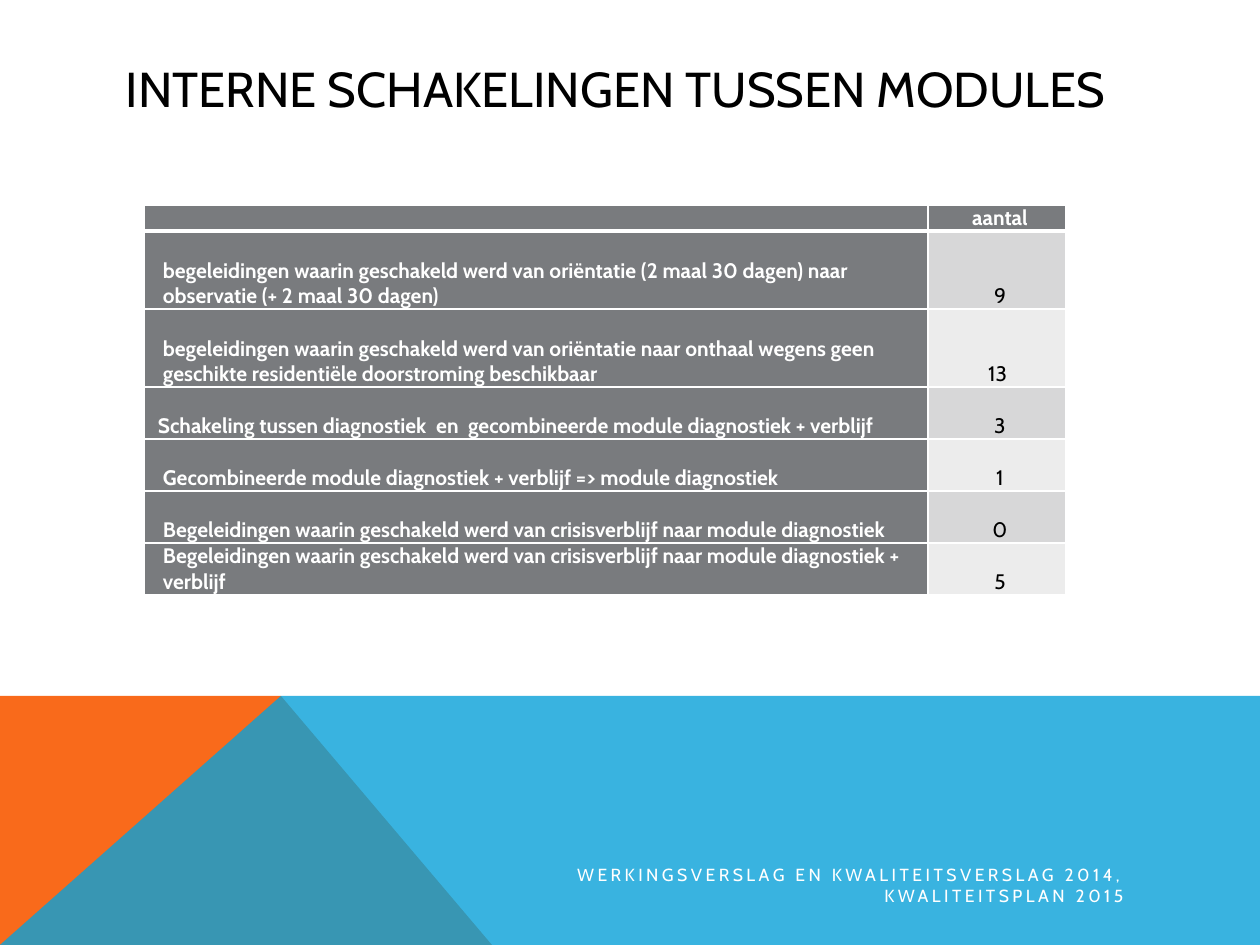
from dataclasses import dataclass

from lxml.etree import SubElement
from pptx import Presentation
from pptx.dml.color import RGBColor as Rgb
from pptx.enum.text import MSO_ANCHOR as Anchor, MSO_AUTO_SIZE as AutoSize, PP_ALIGN as Align
from pptx.oxml.ns import qn
from pptx.util import Emu, Pt

SCALE = 914400 / 126


@dataclass(frozen=True)
class Theme:
    """Colours, font and type sizes of the deck."""
    font: str = "Cabin"
    black: str = "000000"
    white: str = "FFFFFF"
    grey: str = "797B7E"
    bands: tuple = ("D7D7D8", "ECECEC")
    orange: str = "F96A1B"
    blue: str = "08A1D9"
    title: int = 28
    body: int = 12
    footer: int = 10


THEME = Theme()
COLUMNS = (784, 138)
ROWS = (
    (26, 0, "", "aantal"),
    (78, 13, "begeleidingen waarin geschakeld werd van oriëntatie (2 maal 30 dagen) naar "
             "observatie (+ 2 maal 30 dagen)", "9"),
    (78, 13, "begeleidingen waarin geschakeld werd van oriëntatie naar onthaal wegens geen "
             "geschikte residentiële doorstroming beschikbaar", "13 "),
    (52, 8, "Schakeling tussen diagnostiek\u00a0 en\u00a0 gecombineerde module diagnostiek + verblijf", "3"),
    (52, 13, "Gecombineerde module diagnostiek + verblijf => module diagnostiek\u00a0", "1"),
    (52, 13, "Begeleidingen waarin geschakeld werd van crisisverblijf naar module diagnostiek", "0"),
    (51, 13, "Begeleidingen waarin geschakeld werd van crisisverblijf naar module diagnostiek "
             "+ verblijf", "5"),
)


def px(length):
    """Turn pixels into EMU."""
    return Emu(round(length * SCALE))


def style(para, size, color, align=Align.LEFT, bold=False):
    """Format a whole paragraph."""
    para.alignment = align
    font = para.font
    font.name, font.size, font.bold = THEME.font, Pt(size), bold
    font.color.rgb = Rgb.from_string(color)


def add_polygon(page, box, points, color):
    """Draw a filled outline with points relative to the box."""
    left, top = box[:2]
    corners = [(left + x, top + y) for x, y in points]
    builder = page.shapes.build_freeform(*corners[0], scale=SCALE)
    builder.add_line_segments(corners[1:], close=True)
    shape = builder.convert_to_shape()
    shape.shadow.inherit = False
    shape.fill.solid()
    shape.fill.fore_color.rgb = Rgb.from_string(color)
    shape.line.fill.background()
    return shape


def add_backdrop(page, box):
    """Draw the orange wedge and the translucent blue field."""
    width, height = box[2:]
    peak = 281
    add_polygon(page, box, [(0, height), (0, 0), (peak, 0), (492, height)], THEME.orange)
    field = add_polygon(page, box, [(0, height), (peak, 0), (width, 0), (width, height)], THEME.blue)
    color = field.fill._xPr.find(".//" + qn("a:srgbClr"))
    SubElement(color, qn("a:alpha"), val="80000")


def add_title(page, box, text):
    """Place the title in its placeholder."""
    title = page.shapes.title
    title.left, title.top, title.width, title.height = map(px, box)
    frame = title.text_frame
    frame.text = text
    frame.word_wrap, frame.auto_size = True, AutoSize.NONE
    frame.vertical_anchor = Anchor.MIDDLE
    style(frame.paragraphs[0], THEME.title, THEME.black)


def set_borders(cell, top, bottom):
    """Give a cell white borders with the given top and bottom widths."""
    properties = cell._tc.get_or_add_tcPr()
    widths = {"a:lnL": 1, "a:lnR": 1, "a:lnT": top, "a:lnB": bottom}
    for index, (tag, width) in enumerate(widths.items()):
        line = SubElement(properties, qn(tag), w=str(Pt(width)))
        fill = SubElement(line, qn("a:solidFill"))
        SubElement(fill, qn("a:srgbClr"), val=THEME.white)
        properties.insert(index, line)


def fill_cell(cell, text, indent, fill, color, align, bold):
    """Write and colour one table cell."""
    cell.margin_left = cell.margin_right = px(6)
    cell.margin_top = cell.margin_bottom = 0
    cell.vertical_anchor = Anchor.BOTTOM
    cell.fill.solid()
    cell.fill.fore_color.rgb = Rgb.from_string(fill)
    para = cell.text_frame.paragraphs[0]
    style(para, THEME.body, color, align, bold)
    para._p.get_or_add_pPr().set("marL", str(px(indent)))
    if text:
        para.add_run().text = text
    else:
        SubElement(para._p, qn("a:endParaRPr"), sz=str(THEME.body * 100))


def add_counts(page, box):
    """Build the table of transitions and their counts."""
    table = page.shapes.add_table(len(ROWS), len(COLUMNS), *map(px, box)).table
    for column, width in zip(table.columns, COLUMNS):
        column.width = px(width)
    for index, (height, indent, label, count) in enumerate(ROWS):
        table.rows[index].height = px(height)
        header = index == 0
        label_cell, count_cell = table.rows[index].cells
        fill_cell(label_cell, label, indent, THEME.grey, THEME.white, Align.LEFT, True)
        fill_cell(count_cell, count, 6,
                  THEME.grey if header else THEME.bands[(index - 1) % 2],
                  THEME.white if header else THEME.black, Align.CENTER, header)
        for cell in (label_cell, count_cell):
            set_borders(cell, top=3 if index == 1 else 1, bottom=3 if header else 1)


def add_footer(page, box, text):
    """Place the letter-spaced footer."""
    frame = page.shapes.add_textbox(*map(px, box)).text_frame
    frame.word_wrap = True
    frame.vertical_anchor = Anchor.MIDDLE
    para = frame.paragraphs[0]
    span = para.add_run()
    span.text = text
    style(para, THEME.footer, THEME.white, Align.RIGHT)
    span._r.get_or_add_rPr().set("spc", "200")


def main():
    """Build and save the deck."""
    deck = Presentation()
    deck.slide_width, deck.slide_height = px(1260), px(945)
    page = deck.slides.add_slide(deck.slide_layouts[5])
    add_backdrop(page, (0, 696, 1260, 249))
    add_title(page, (113, 50, 1036, 76), "INTERNE SCHAKELINGEN TUSSEN MODULES")
    add_counts(page, (144, 205, sum(COLUMNS), sum(row[0] for row in ROWS)))
    add_footer(page, (485, 866, 651, 38),
               "WERKINGSVERSLAG EN KWALITEITSVERSLAG 2014, KWALITEITSPLAN 2015")
    deck.save("out.pptx")


if __name__ == "__main__":
    main()
